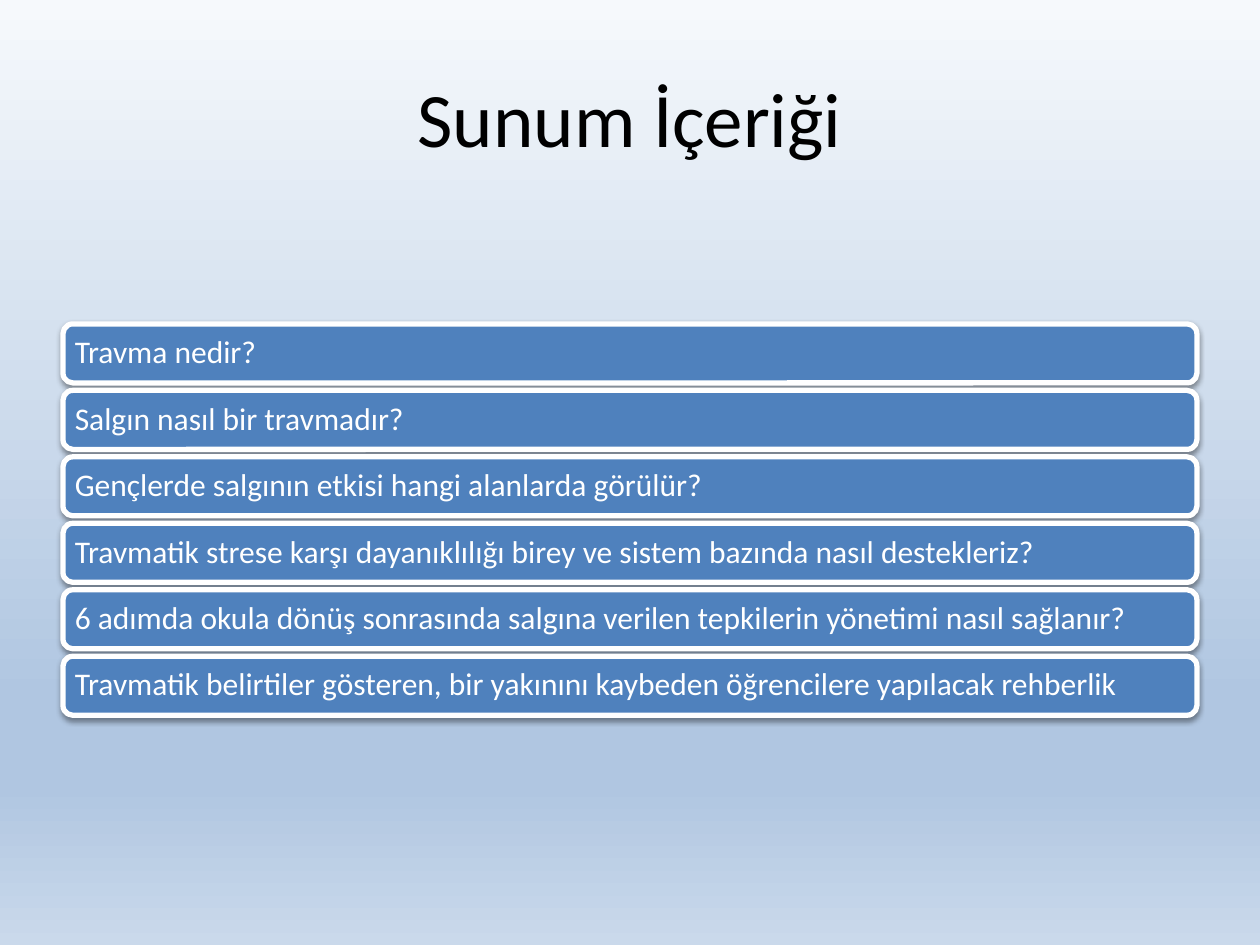
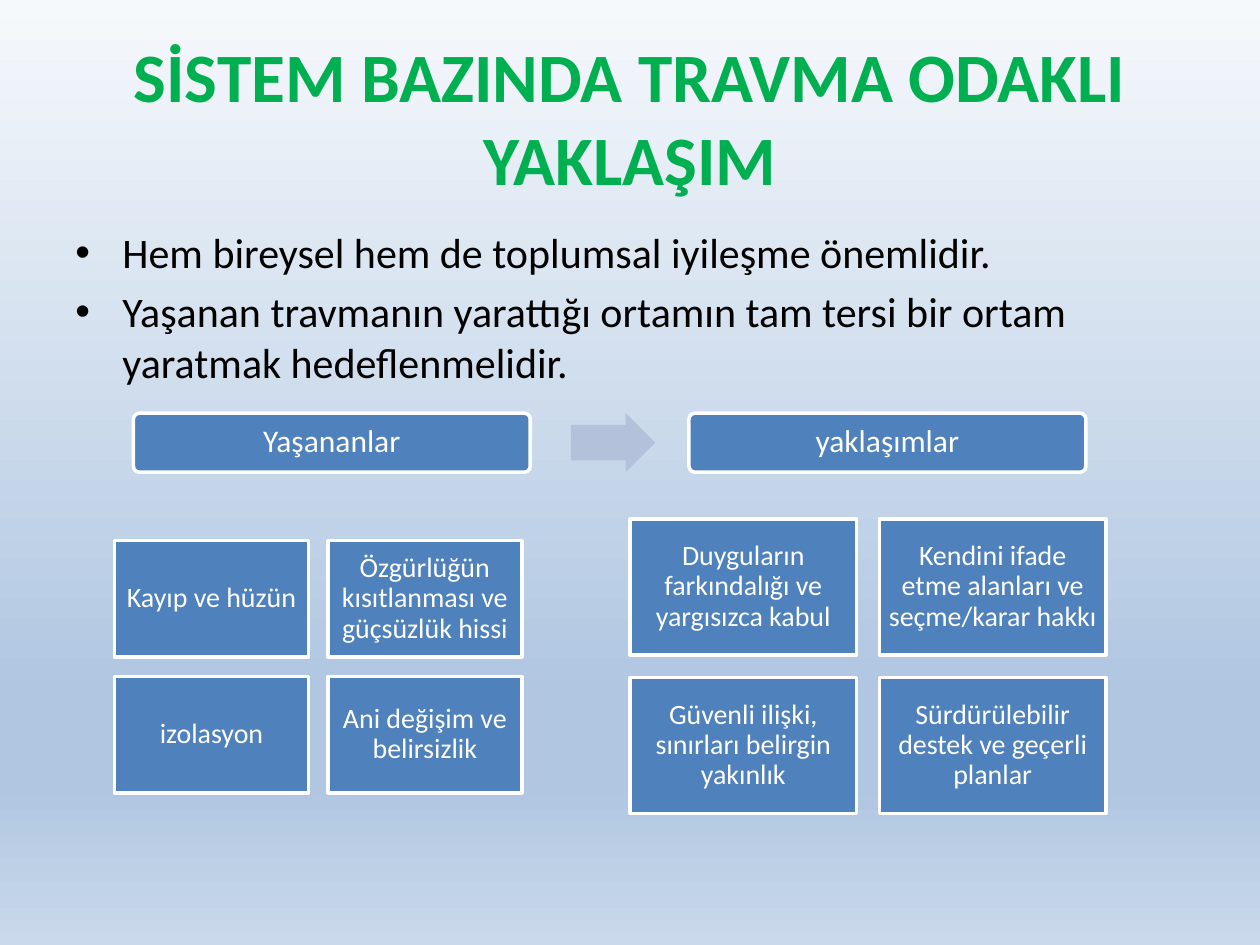
from collections import namedtuple
from dataclasses import dataclass

from lxml.etree import SubElement as Sub
from pptx import Presentation
from pptx.dml.color import RGBColor as Rgb
from pptx.enum.shapes import MSO_SHAPE as Kind
from pptx.enum.text import MSO_ANCHOR as Anchor, PP_ALIGN as Align
from pptx.oxml.ns import qn
from pptx.util import Cm, Pt

Box = namedtuple("Box", "left top width height")  # centimetres


@dataclass(frozen=True)
class Theme:
    font: str = "Calibri"
    ink: str = "000000"
    paper: str = "FFFFFF"
    blue: str = "4F81BD"
    pale: str = "B3C1DB"
    green: str = "00B050"
    sky: tuple = ((0, "F6F9FC"), (74, "B0C6E1"), (83, "B0C6E1"), (100, "CAD9EB"))
    title: float = 44
    tight: float = 39.6
    body: float = 24
    label: float = 18
    tile: float = 16


THEME = Theme()
WIDE, HIGH = 25.4, 19.05
HEAD = Box(1.27, 0.76, 22.86, 3.18)

TOPICS = (
    "Travma nedir?",
    "Salgın nasıl bir travmadır?",
    "Gençlerde salgının etkisi hangi alanlarda görülür?",
    "Travmatik strese karşı dayanıklılığı birey ve sistem bazında nasıl destekleriz?",
    "6 adımda okula dönüş sonrasında salgına verilen tepkilerin yönetimi nasıl sağlanır?",
    "Travmatik belirtiler gösteren, bir yakınını kaybeden öğrencilere yapılacak rehberlik",
)
POINTS = (
    "Hem bireysel hem de toplumsal iyileşme önemlidir.",
    "Yaşanan travmanın yarattığı ortamın tam tersi bir ortam yaratmak hedeflenmelidir.",
)
STAGES = ("Yaşananlar", "yaklaşımlar")
LOSSES = (
    "Kayıp ve hüzün",
    "Özgürlüğün kısıtlanması ve güçsüzlük hissi",
    "izolasyon",
    "Ani değişim ve belirsizlik",
)
AIDS = (
    "Duyguların farkındalığı ve yargısızca kabul",
    "Kendini ifade etme alanları ve seçme/karar hakkı",
    "Güvenli ilişki, sınırları belirgin yakınlık",
    "Sürdürülebilir destek ve geçerli planlar",
)


def place(box):
    return [Cm(side) for side in box]


def style(para, size, color, align=Align.LEFT, bold=False):
    para.alignment = align
    font = para.font
    font.name, font.size, font.bold = THEME.font, Pt(size), bold
    font.color.rgb = Rgb.from_string(color)


def paint(master):
    """Give every slide the vertical sky gradient."""
    fill = master.background.fill
    fill.gradient()
    fill.gradient_angle = 270
    stops = master.element.find(".//" + qn("a:gsLst"))
    for stop in list(stops):
        stops.remove(stop)
    for spot, color in THEME.sky:
        stop = Sub(stops, qn("a:gs"), pos=str(spot * 1000))
        Sub(stop, qn("a:srgbClr"), val=color)


def add_text(slide, box):
    frame = slide.shapes.add_textbox(*place(box)).text_frame
    frame.word_wrap = True
    return frame


def add_title(slide, text, size=THEME.title, color=THEME.ink, bold=False):
    frame = add_text(slide, HEAD)
    frame.vertical_anchor = Anchor.MIDDLE
    frame.text = text
    style(frame.paragraphs[0], size, color, Align.CENTER, bold)


def add_shape(slide, kind, box, color):
    shape = slide.shapes.add_shape(kind, *place(box))
    shape.shadow.inherit = False
    shape.fill.solid()
    shape.fill.fore_color.rgb = Rgb.from_string(color)
    shape.line.fill.background()
    return shape


def add_card(slide, kind, box, text, size, align=Align.CENTER, edge=2):
    """Add a blue shape with a white edge and white text."""
    card = add_shape(slide, kind, box, THEME.blue)
    card.line.color.rgb = Rgb.from_string(THEME.paper)
    card.line.width = Pt(edge)
    frame = card.text_frame
    frame.word_wrap = True
    frame.vertical_anchor = Anchor.MIDDLE
    frame.margin_left = frame.margin_right = Cm(0.18)
    frame.margin_top = frame.margin_bottom = Cm(0.18)
    frame.text = text
    para = frame.paragraphs[0]
    para.line_spacing = 0.9
    style(para, size, THEME.paper, align)
    return card


def cast(shape):
    """Drop a soft shadow straight below the shape."""
    glow = shape.element.spPr.find(qn("a:effectLst"))
    drop = Sub(glow, qn("a:outerShdw"), blurRad=str(Pt(3.1)), dist=str(Pt(1.6)),
               dir="5400000", rotWithShape="0")
    tint = Sub(drop, qn("a:srgbClr"), val=THEME.ink)
    Sub(tint, qn("a:alpha"), val="38000")


def add_rows(slide, box, texts, gap=0.15):
    tall = (box.height + gap) / len(texts) - gap
    for i, text in enumerate(texts):
        row = Box(box.left, box.top + i * (tall + gap), box.width, tall)
        cast(add_card(slide, Kind.ROUNDED_RECTANGLE, row, text,
                      THEME.label, Align.LEFT, 3))


def add_points(slide, box, texts):
    frame = add_text(slide, box)
    for i, text in enumerate(texts):
        para = frame.add_paragraph() if i else frame.paragraphs[0]
        para.text = text
        para.space_before = Pt(THEME.body * 0.2)
        style(para, THEME.body, THEME.ink)
        props = para._p.get_or_add_pPr()
        props.set("marL", str(Cm(0.95)))
        props.set("indent", str(-Cm(0.95)))
        Sub(props, qn("a:buFont"), typeface="Arial")
        Sub(props, qn("a:buChar"), char="•")


def add_flow(slide, box, texts, wide=8):
    """Put a label at each end of the box and an arrow between them."""
    for left, text in zip((box.left, box.left + box.width - wide), texts):
        card = add_card(slide, Kind.ROUNDED_RECTANGLE,
                        box._replace(left=left, width=wide), text, THEME.label)
        card.adjustments[0] = 0.1
    spot = Box(box.left + wide + 0.82, box.top, 1.7, box.height)
    arrow = add_shape(slide, Kind.RIGHT_ARROW, spot, THEME.pale)
    arrow.adjustments[0], arrow.adjustments[1] = 0.6, 0.5


def add_grid(slide, left, top, wide, texts):
    """Lay tiles in two columns, with gaps a tenth of the tile width."""
    tall, gap = wide * 0.6, wide * 0.1
    for i, text in enumerate(texts):
        row, col = divmod(i, 2)
        tile = Box(left + col * (wide + gap), top + row * (tall + gap), wide, tall)
        add_card(slide, Kind.RECTANGLE, tile, text, THEME.tile)


def make_agenda(slide):
    add_title(slide, "Sunum İçeriği")
    add_rows(slide, Box(1.27, 6.53, 22.86, 7.89), TOPICS)


def make_system(slide):
    add_title(slide, "SİSTEM BAZINDA TRAVMA ODAKLI YAKLAŞIM",
              THEME.tight, THEME.green, True)
    add_points(slide, Box(1.27, 4.45, 22.86, 3.6), POINTS)
    add_flow(slide, Box(2.69, 8.33, 19.2, 1.19), STAGES)
    add_grid(slide, 2.31, 10.9, 3.91, LOSSES)
    add_grid(slide, 12.7, 10.46, 4.57, AIDS)


def main():
    deck = Presentation()
    deck.slide_width, deck.slide_height = Cm(WIDE), Cm(HIGH)
    paint(deck.slide_master)
    for make in (make_agenda, make_system):
        make(deck.slides.add_slide(deck.slide_layouts[6]))
    deck.save("out.pptx")


if __name__ == "__main__":
    main()
